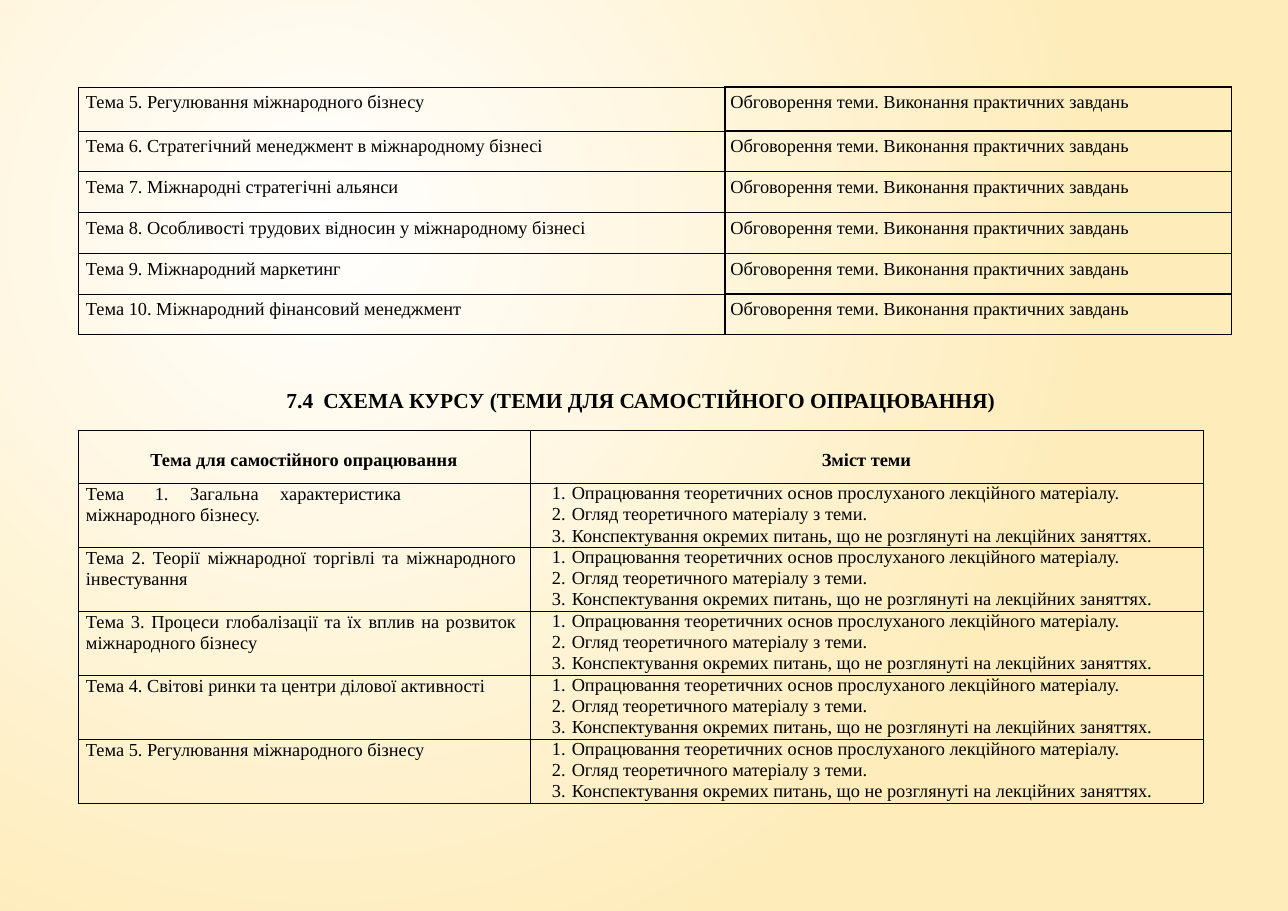
import pptx
import pptx.dml.color
import pptx.enum.text
import pptx.oxml.ns
import pptx.util
from lxml import etree

Inches, Pt = pptx.util.Inches, pptx.util.Pt
ALIGN = pptx.enum.text.PP_ALIGN
INK = "000000"
HEADING = [("7.4", 0), (" ", 3), ("СХЕМА КУРСУ (ТЕМИ ДЛЯ САМОСТІЙНОГО ОПРАЦЮВАННЯ)", 0)]
PRACTICE = "Обговорення теми. Виконання практичних завдань"
PRACTICE_TOPICS = [
    "Тема 5. Регулювання міжнародного бізнесу",
    "Тема 6. Стратегічний менеджмент в міжнародному бізнесі",
    "Тема 7. Міжнародні стратегічні альянси",
    "Тема 8. Особливості трудових відносин у міжнародному бізнесі",
    "Тема 9. Міжнародний маркетинг",
    "Тема 10. Міжнародний фінансовий менеджмент",
]
STUDY_HEADERS = ["Тема для самостійного опрацювання", "Зміст теми"]
WIDE_TOPIC = [("Тема", 0), (" ", 17), ("1.", 0), (" ", 11), ("Загальна", 0), (" ", 11),
              ("характеристика", 0), (" ", 11), ("міжнародного бізнесу.", 0)]
STUDY_TOPICS = [
    (WIDE_TOPIC, ALIGN.LEFT, 0.3),
    ("Тема 2. Теорії міжнародної торгівлі та міжнародного інвестування", ALIGN.JUSTIFY, 0.12),
    ("Тема 3. Процеси глобалізації та їх вплив на розвиток міжнародного бізнесу",
     ALIGN.JUSTIFY, 0.12),
    ("Тема 4. Світові ринки та центри ділової активності", ALIGN.LEFT, 0.12),
    ("Тема 5. Регулювання міжнародного бізнесу", ALIGN.LEFT, 0.12),
]
STUDY_STEPS = [
    ("Опрацювання теоретичних основ прослуханого лекційного матеріалу.", 13.2),
    ("Огляд теоретичного матеріалу з теми.", 13.8),
    ("Конспектування окремих питань, що не розглянуті на лекційних заняттях.", 13.9),
]


def rgb(color):
    """Turn a hex string into a colour."""
    return pptx.dml.color.RGBColor.from_string(color)


def apply(target, values):
    """Set each attribute named in a dict of values."""
    for name, value in values.items():
        setattr(target, name, value)


def add(parent, tag, **attributes):
    """Append a drawing element to its parent."""
    element = etree.SubElement(parent, pptx.oxml.ns.qn(tag))
    for name, value in attributes.items():
        element.set(name, str(value))
    return element


def write(p, text, size=12, bold=False, left=0, hanging=0, numbered=False, **layout):
    """Write one paragraph from a string or from runs with letter spacing."""
    apply(p, layout)
    for part, spacing in [(text, 0)] if isinstance(text, str) else text:
        r = p.add_run()
        r.text = part
        apply(r.font, {"name": "Times New Roman", "size": Pt(size), "bold": bold})
        r.font.color.rgb = rgb(INK)
        if spacing:
            r._r.get_or_add_rPr().set("spc", str(spacing * 100))
    props = p._p.get_or_add_pPr()
    props.set("marL", str(Inches(left)))
    props.set("indent", str(-Inches(hanging)))
    if numbered:
        add(props, "a:buAutoNum", type="arabicPeriod")
    else:
        add(props, "a:buNone")


def format_cell(cell, top=0, right=0, border=0.5):
    """Clear the fill, set the margins and draw the four borders."""
    apply(cell, {"margin_left": 0, "margin_top": Inches(top),
                 "margin_right": Inches(right), "margin_bottom": 0})
    props = cell._tc.get_or_add_tcPr()
    for side in ("a:lnL", "a:lnR", "a:lnT", "a:lnB"):
        line = add(props, side, w=Pt(border))
        add(add(line, "a:solidFill"), "a:srgbClr", val=INK)
    cell.fill.background()
    return cell.text_frame


def add_grid(s, box, columns, rows):
    """Add a plain table with the given column widths and row heights."""
    frame = s.shapes.add_table(len(rows), len(columns), *map(Inches, box))
    table = frame.table
    apply(table, {"first_row": False, "horz_banding": False})
    for column, width in zip(table.columns, columns):
        column.width = Inches(width)
    for row, height in zip(table.rows, rows):
        row.height = Inches(height)
    return table


def add_background(s):
    """Fill the background with a circular gradient."""
    fill = s.background.fill
    fill.gradient()
    for stop, color in zip(fill.gradient_stops, ("FFFFFF", "FEECBA")):
        stop.color.rgb = rgb(color)
    gradient = s.element.xpath(".//p:bg//a:gradFill")[0]
    for linear in gradient.xpath("a:lin"):
        gradient.remove(linear)
    circle = add(gradient, "a:path", path="circle")
    add(circle, "a:fillToRect", l=50000, t=50000, r=100000, b=100000)


def add_heading(s, box):
    """Place and format the section heading."""
    sp = s.shapes.title
    apply(sp, dict(zip(("left", "top", "width", "height"), map(Inches, box))))
    tf = sp.text_frame
    apply(tf, {"margin_left": 0, "margin_top": Inches(0.01), "margin_right": 0,
               "margin_bottom": 0, "word_wrap": True,
               "auto_size": pptx.enum.text.MSO_AUTO_SIZE.NONE,
               "vertical_anchor": pptx.enum.text.MSO_ANCHOR.TOP})
    write(tf.paragraphs[0], HEADING, size=14, bold=True, left=0.01,
          alignment=ALIGN.LEFT, space_before=Pt(1.1))


def add_practice_table(s, box):
    """List the practical class topics."""
    rows = [0.4] + [0.37] * (len(PRACTICE_TOPICS) - 1)
    table = add_grid(s, box, [5.87, 4.6], rows)
    for i, topic in enumerate(PRACTICE_TOPICS):
        for j, (text, left, border) in enumerate([(topic, 0.07, 0.5), (PRACTICE, 0.05, 1)]):
            tf = format_cell(table.cell(i, j), top=0.05, border=border)
            write(tf.paragraphs[0], text, left=left, space_before=Pt(3.8))


def add_study_table(s, box):
    """List the self-study topics and their steps."""
    rows = [0.48] + [0.58] * len(STUDY_TOPICS)
    table = add_grid(s, box, [4.1, 6.11], rows)
    for j, header in enumerate(STUDY_HEADERS):
        tf = format_cell(table.cell(0, j), top=0.18)
        write(tf.paragraphs[0], header, bold=True, alignment=ALIGN.CENTER)
    for i, (topic, alignment, right) in enumerate(STUDY_TOPICS, 1):
        tf = format_cell(table.cell(i, 0), right=right)
        write(tf.paragraphs[0], topic, left=0.07, alignment=alignment, line_spacing=Pt(13.8))
        tf = format_cell(table.cell(i, 1))
        for k, (step, spacing) in enumerate(STUDY_STEPS):
            p = tf.add_paragraph() if k else tf.paragraphs[0]
            write(p, step, left=0.38, hanging=0.18, numbered=True, line_spacing=Pt(spacing))


def main():
    """Build the slide and save it."""
    prs = pptx.Presentation()
    apply(prs, {"slide_width": Inches(11.69), "slide_height": Inches(8.27)})
    s = prs.slides.add_slide(prs.slide_layouts[5])
    add_background(s)
    add_heading(s, (2.59, 3.5, 6.6, 0.26))
    add_practice_table(s, (0.71, 0.79, 10.47, 2.25))
    add_study_table(s, (0.71, 3.91, 10.21, 3.38))
    prs.save("out.pptx")


if __name__ == "__main__":
    main()
